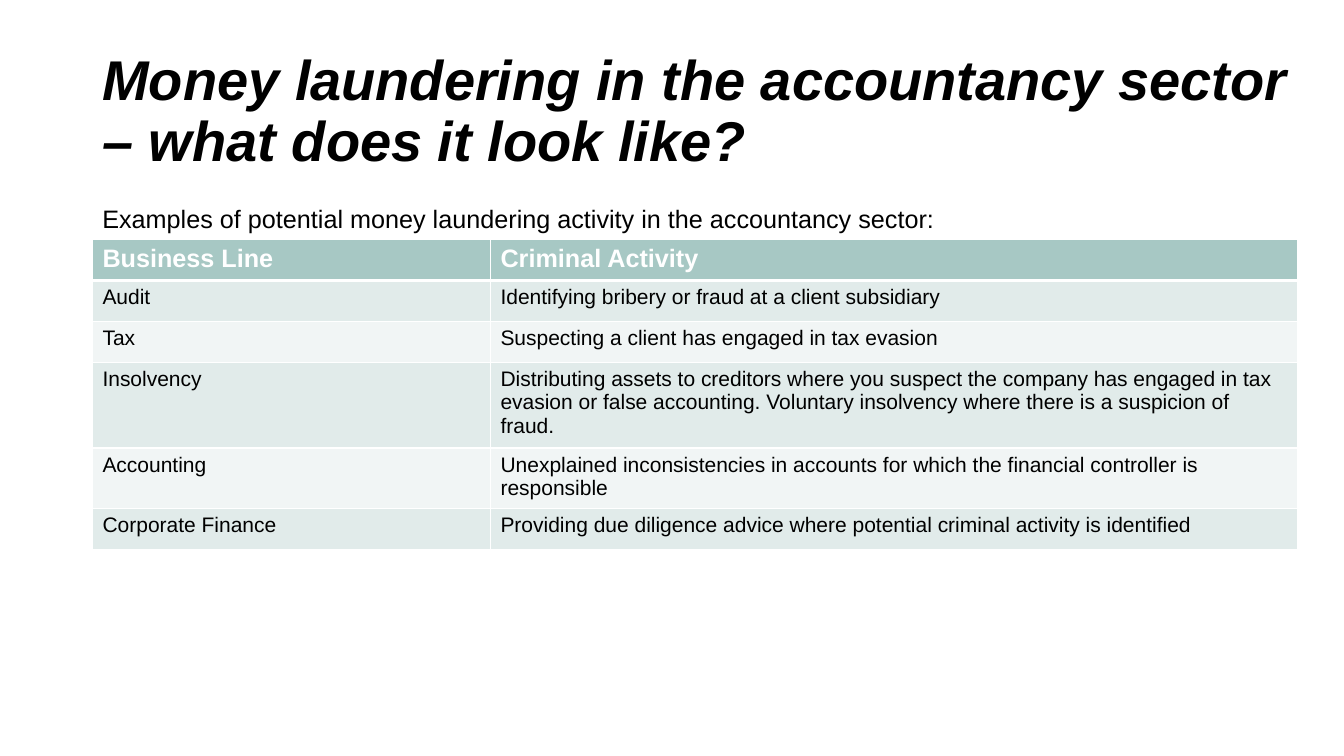
from dataclasses import dataclass

import lxml.etree
import pptx
import pptx.dml.color
import pptx.enum.text
import pptx.oxml.ns
import pptx.util

Cm = pptx.util.Cm
Pt = pptx.util.Pt


@dataclass(frozen=True)
class Theme:
    font: str = "Arial"
    black: str = "000000"
    white: str = "FFFFFF"
    header_fill: str = "A7C8C4"
    band_fills: tuple = ("E1EBEA", "F1F5F5")
    title_size: int = 40
    lead_size: int = 18
    body_size: int = 15
    border: int = 1
    header_border: int = 3


theme = Theme()


def write_text(frame, text, size=theme.body_size, color=theme.black, bold=False,
               italic=False, line_spacing=None):
    paragraph = frame.paragraphs[0]
    paragraph.alignment = pptx.enum.text.PP_ALIGN.LEFT
    paragraph.line_spacing = line_spacing
    run = paragraph.add_run()
    run.text = text
    run.font.name = theme.font
    run.font.size = Pt(size)
    run.font.bold = bold
    run.font.italic = italic
    run.font.color.rgb = pptx.dml.color.RGBColor.from_string(color)
    paragraph_end = lxml.etree.SubElement(paragraph._p, pptx.oxml.ns.qn("a:endParaRPr"))
    paragraph_end.set("sz", str(size * 100))


def draw_borders(cell, bottom_width):
    properties = cell._tc.get_or_add_tcPr()
    for side in "LRTB":
        line = lxml.etree.SubElement(properties, pptx.oxml.ns.qn(f"a:ln{side}"))
        line.set("w", str(Pt(bottom_width if side == "B" else theme.border)))
        fill = lxml.etree.SubElement(line, pptx.oxml.ns.qn("a:solidFill"))
        color = lxml.etree.SubElement(fill, pptx.oxml.ns.qn("a:srgbClr"))
        color.set("val", theme.white)


presentation = pptx.Presentation()
presentation.slide_width = Cm(33.87)
presentation.slide_height = Cm(19.05)
slide = presentation.slides.add_slide(presentation.slide_layouts[6])

left, width = Cm(2.33), Cm(30.38)

title = slide.shapes.add_textbox(left, Cm(1.01), width, Cm(3.68)).text_frame
title.word_wrap = True
title.vertical_anchor = pptx.enum.text.MSO_ANCHOR.MIDDLE
write_text(title, "Money laundering in the accountancy sector – what does it look like?",
           size=theme.title_size, bold=True, italic=True, line_spacing=0.9)

activities = [
    ("Business Line", "Criminal Activity"),
    ("Audit", "Identifying bribery or fraud at a client subsidiary"),
    ("Tax", "Suspecting a client has engaged in tax evasion"),
    ("Insolvency", "Distributing assets to creditors where you suspect the company has "
     "engaged in tax evasion or false accounting. Voluntary insolvency where there is a "
     "suspicion of fraud."),
    ("Accounting", "Unexplained inconsistencies in accounts for which the financial "
     "controller is responsible"),
    ("Corporate Finance", "Providing due diligence advice where potential criminal "
     "activity is identified"),
]
row_height = Cm(1.03)
table = slide.shapes.add_table(len(activities), 2, left, Cm(6.04), width,
                               row_height * len(activities)).table
table.columns[0].width = Cm(10.03)
table.columns[1].width = Cm(20.35)

for row_index, activity in enumerate(activities):
    table.rows[row_index].height = row_height
    if row_index == 0:
        fill_color = theme.header_fill
        text_format = dict(size=theme.lead_size, color=theme.white, bold=True)
        bottom_width = theme.header_border
    else:
        fill_color = theme.band_fills[(row_index - 1) % 2]
        text_format = {}
        bottom_width = theme.border
    for column_index, text in enumerate(activity):
        cell = table.cell(row_index, column_index)
        draw_borders(cell, bottom_width)
        cell.fill.solid()
        cell.fill.fore_color.rgb = pptx.dml.color.RGBColor.from_string(fill_color)
        write_text(cell.text_frame, text, **text_format)

lead = slide.shapes.add_textbox(left, Cm(5), width, Cm(1.03)).text_frame
lead.word_wrap = True
write_text(lead, "Examples of potential money laundering activity in the accountancy sector:",
           size=theme.lead_size)

presentation.save("out.pptx")
